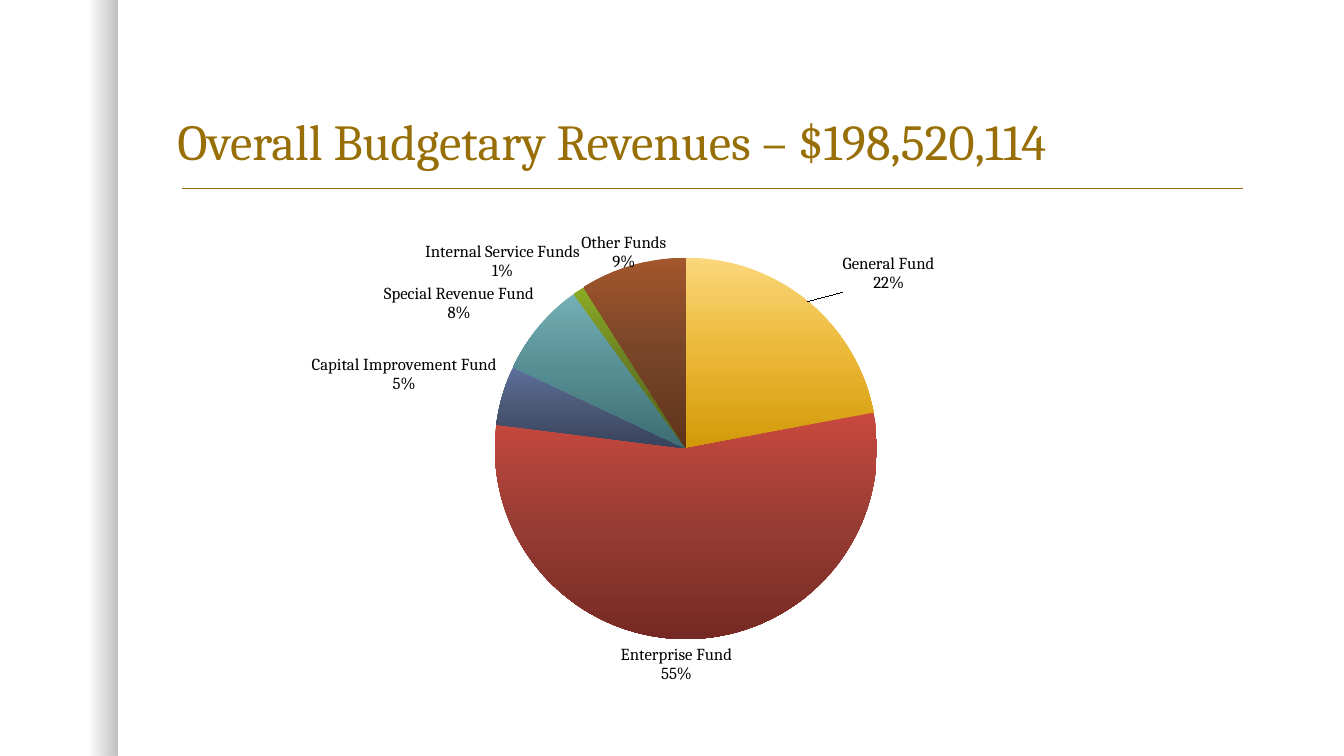
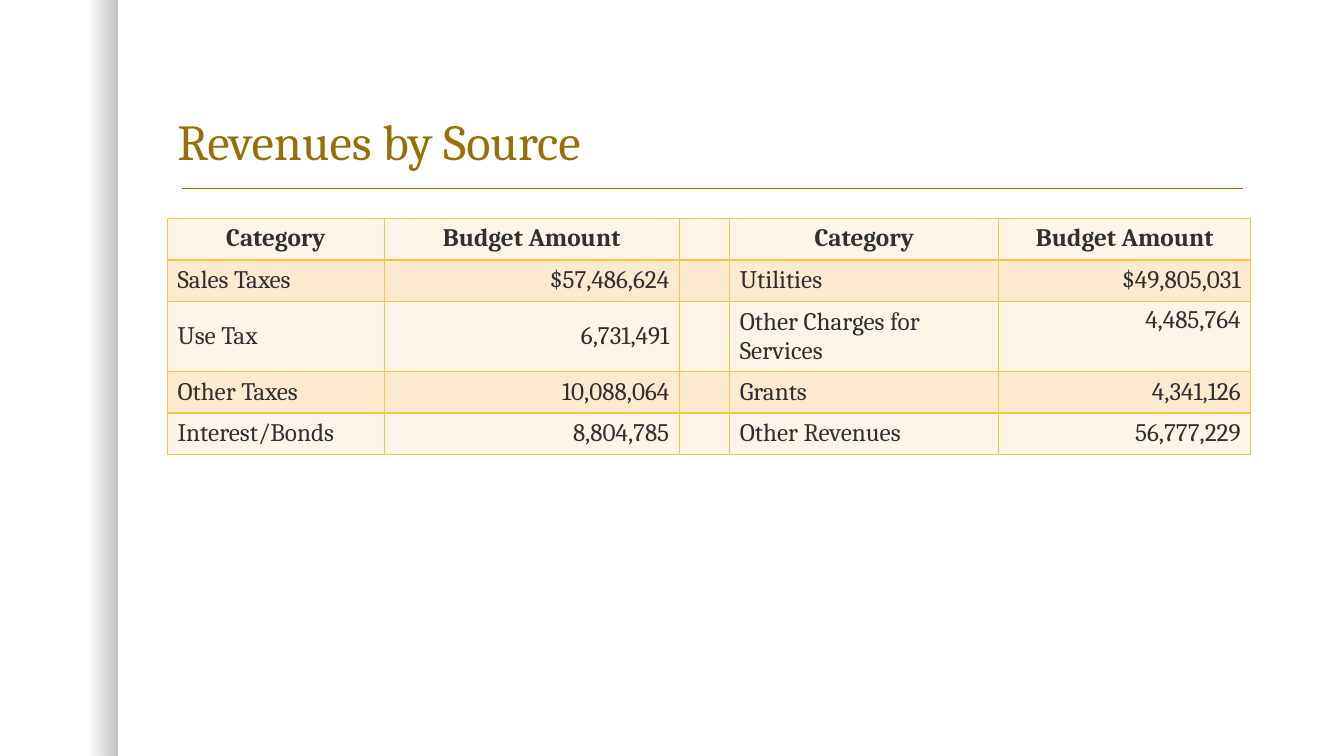
import copy
from dataclasses import dataclass

import pptx
import pptx.chart.data
import pptx.dml.color
import pptx.enum.chart
import pptx.enum.shapes
import pptx.enum.text
import pptx.oxml
import pptx.oxml.ns
import pptx.util

Cm = pptx.util.Cm
Pt = pptx.util.Pt
qn = pptx.oxml.ns.qn
ALIGN = pptx.enum.text.PP_ALIGN
ANCHOR = pptx.enum.text.MSO_ANCHOR


@dataclass(frozen=True)
class Theme:
    font: str = "Cambria"
    title_color: str = "986F07"
    text_color: str = "303030"
    label_color: str = "000000"
    border_color: str = "F7C547"
    row_fills: tuple = ("FDF5E9", "FCEACF")
    title_size: int = 36
    table_size: int = 18
    label_size: int = 12
    line_width: int = 1
    left: float = 4.22
    width: float = 27.3


THEME = Theme()
SLIDE_WIDTH, SLIDE_HEIGHT = 33.87, 19.05

# Fund, share in percent, gradient from top to bottom, shift of its label
FUNDS = [
    ("General Fund", 22, ("FBD77C", "EBB837", "D29909"), (0.03, -0.01)),
    ("Enterprise Fund", 55, ("C8483E", "963C34", "762923"), (-0.015, 0.01)),
    ("Capital Improvement Fund", 5, ("5D719D", "4B5876", "37425B"), None),
    ("Special Revenue Fund", 8, ("75B0B6", "558D92", "3D6D72"), None),
    ("Internal Service Funds", 1, ("8BAB25", "687D24", "516317"), None),
    ("Other Funds", 9, ("A3572C", "784528", "5F331B"), (0.034, 0.026)),
]

REVENUES = [
    ("Category", "Budget Amount", "", "Category", "Budget Amount"),
    ("Sales Taxes", "$57,486,624", "", "Utilities", "$49,805,031"),
    ("Use Tax", "6,731,491", "", "Other Charges for Services", "4,485,764"),
    ("Other Taxes", "10,088,064", "", "Grants", "4,341,126"),
    ("Interest/Bonds", "8,804,785", "", "Other Revenues", "56,777,229"),
]
COLUMN_WIDTHS = (5.46, 7.44, 1.27, 6.78, 6.35)
ROW_HEIGHTS = (1.04, 1.04, 1.73, 1.04, 1.04)
AMOUNT_COLUMNS = (1, 4)
TOP_CELL = (2, 4)


def rgb(value):
    return pptx.dml.color.RGBColor.from_string(value)


def xml(tag, body="", attributes=""):
    """Make a drawing or chart element from its prefixed tag."""
    names = pptx.oxml.ns.nsdecls("a", "c")
    return pptx.oxml.parse_xml(f"<{tag} {names} {attributes}>{body}</{tag}>")


def style_font(font, size, color, bold=False):
    font.name = THEME.font
    font.size = Pt(size)
    font.bold = bold
    font.color.rgb = rgb(color)


def fill_gradient(fill, properties, stops, angle):
    """Fill with stops given as (position, colour, opacity) in percent."""
    fill.background()
    body = "".join(
        f'<a:gs pos="{position * 1000}"><a:srgbClr val="{color}">'
        f'<a:alpha val="{opacity * 1000}"/></a:srgbClr></a:gs>'
        for position, color, opacity in stops
    )
    gradient = xml("a:gradFill", f'<a:gsLst>{body}</a:gsLst>'
                   f'<a:lin ang="{angle * 60000}" scaled="0"/>', 'rotWithShape="1"')
    properties.replace(properties.find(qn("a:noFill")), gradient)


def manual_layout(**settings):
    body = "".join(f'<c:{name} val="{value}"/>' for name, value in settings.items())
    return xml("c:layout", f"<c:manualLayout>{body}</c:manualLayout>")


# Parts shared by every slide
def add_side_band(slide):
    band = slide.shapes.add_shape(
        pptx.enum.shapes.MSO_SHAPE.RECTANGLE, 0, 0, Cm(2.95), Cm(SLIDE_HEIGHT))
    band.shadow.inherit = False
    band.line.fill.background()
    fill_gradient(band.fill, band._element.spPr,
                  [(75, "000000", 0), (100, "000000", 25)], 0)


def add_title_rule(slide):
    rule = slide.shapes.add_connector(
        pptx.enum.shapes.MSO_CONNECTOR.STRAIGHT, Cm(4.6), Cm(4.75), Cm(31.32), Cm(4.75))
    rule.line.color.rgb = rgb(THEME.title_color)
    rule.line.width = Pt(THEME.line_width)
    rule._element.spPr.append(xml("a:effectLst"))


def add_title(slide, text):
    frame = slide.shapes.add_textbox(
        Cm(THEME.left), Cm(1.07), Cm(THEME.width), Cm(3.38)).text_frame
    frame.word_wrap = True
    frame.vertical_anchor = ANCHOR.BOTTOM
    frame.text = text
    heading = frame.paragraphs[0]
    heading.line_spacing = 0.9
    style_font(heading.runs[0].font, THEME.title_size, THEME.title_color)


def add_titled_slide(deck, title):
    slide = deck.slides.add_slide(deck.slide_layouts[6])
    add_side_band(slide)
    add_title_rule(slide)
    add_title(slide, title)
    return slide


# Pie of funds
def add_fund_labels(series):
    labels = series.data_labels
    labels.show_category_name = True
    labels.show_percentage = True
    labels.show_value = False
    labels.number_format = "0%"
    labels.number_format_is_linked = False
    labels.position = pptx.enum.chart.XL_LABEL_POSITION.BEST_FIT
    style_font(labels.font, THEME.label_size, THEME.label_color)

    group = labels._element
    group.find(qn("c:showBubbleSize")).addnext(xml("c:separator", "\n"))
    shared = [part for part in group if part.tag != qn("c:showLeaderLines")]
    shifts = [(index, fund[3]) for index, fund in enumerate(FUNDS) if fund[3]]
    for place, (index, (x, y)) in enumerate(shifts):
        label = xml("c:dLbl", f'<c:idx val="{index}"/>')
        label.append(manual_layout(x=x, y=y))
        label.extend([copy.deepcopy(part) for part in shared])
        group.insert(place, label)


def add_fund_pie(slide):
    shares = pptx.chart.data.CategoryChartData()
    shares.categories = [fund[0] for fund in FUNDS]
    shares.add_series("Series 1", [fund[1] for fund in FUNDS])
    pie = slide.shapes.add_chart(
        pptx.enum.chart.XL_CHART_TYPE.PIE,
        Cm(THEME.left), Cm(5.59), Cm(26.24), Cm(11.63), shares).chart
    pie.has_title = False
    pie.has_legend = False
    style_font(pie.font, THEME.label_size, THEME.text_color)

    plot = pie.plots[0]
    plot.vary_by_categories = True
    area = plot._element.getparent()
    for layout in area.findall(qn("c:layout")):
        area.remove(layout)
    area.insert(0, manual_layout(layoutTarget="inner", xMode="edge", yMode="edge",
                                 x=0.025, y=0.076, w=0.946, h=0.828))

    series = plot.series[0]
    for index, fund in enumerate(FUNDS):
        look = series.points[index].format
        look.line.fill.background()
        properties = series._element.findall(qn("c:dPt"))[index].find(qn("c:spPr"))
        stops = [(position, color, 100) for position, color in zip((0, 50, 100), fund[2])]
        fill_gradient(look.fill, properties, stops, 90)
    add_fund_labels(series)


# Table of revenues
def add_cell_borders(cell):
    properties = cell._tc.get_or_add_tcPr()
    for place, side in enumerate(("lnL", "lnR", "lnT", "lnB")):
        line = xml(f"a:{side}", f'<a:solidFill><a:srgbClr val="{THEME.border_color}"/>'
                   '</a:solidFill>', f'w="{Pt(THEME.line_width)}"')
        properties.insert(place, line)


def fill_cell(cell, text, row, column):
    header = row == 0
    cell.fill.solid()
    cell.fill.fore_color.rgb = rgb(THEME.row_fills[row % 2])
    add_cell_borders(cell)
    at_top = header or (row, column) == TOP_CELL
    cell.vertical_anchor = ANCHOR.TOP if at_top else ANCHOR.MIDDLE
    if not text:
        return
    cell.text_frame.text = text
    entry = cell.text_frame.paragraphs[0]
    if header:
        entry.alignment = ALIGN.CENTER
    else:
        entry.alignment = ALIGN.RIGHT if column in AMOUNT_COLUMNS else ALIGN.LEFT
    style_font(entry.runs[0].font, THEME.table_size, THEME.text_color, header)


def add_revenue_table(slide):
    table = slide.shapes.add_table(
        len(REVENUES), len(COLUMN_WIDTHS), Cm(THEME.left), Cm(5.51),
        Cm(THEME.width), Cm(sum(ROW_HEIGHTS))).table
    table.first_row = False
    table.horz_banding = False
    for column, width in zip(table.columns, COLUMN_WIDTHS):
        column.width = Cm(width)
    for row, height in zip(table.rows, ROW_HEIGHTS):
        row.height = Cm(height)
    for row, entries in enumerate(REVENUES):
        for column, text in enumerate(entries):
            fill_cell(table.cell(row, column), text, row, column)


def main():
    deck = pptx.Presentation()
    deck.slide_width = Cm(SLIDE_WIDTH)
    deck.slide_height = Cm(SLIDE_HEIGHT)
    add_fund_pie(add_titled_slide(deck, "Overall Budgetary Revenues – $198,520,114"))
    add_revenue_table(add_titled_slide(deck, "Revenues by Source"))
    deck.save("out.pptx")


if __name__ == "__main__":
    main()
